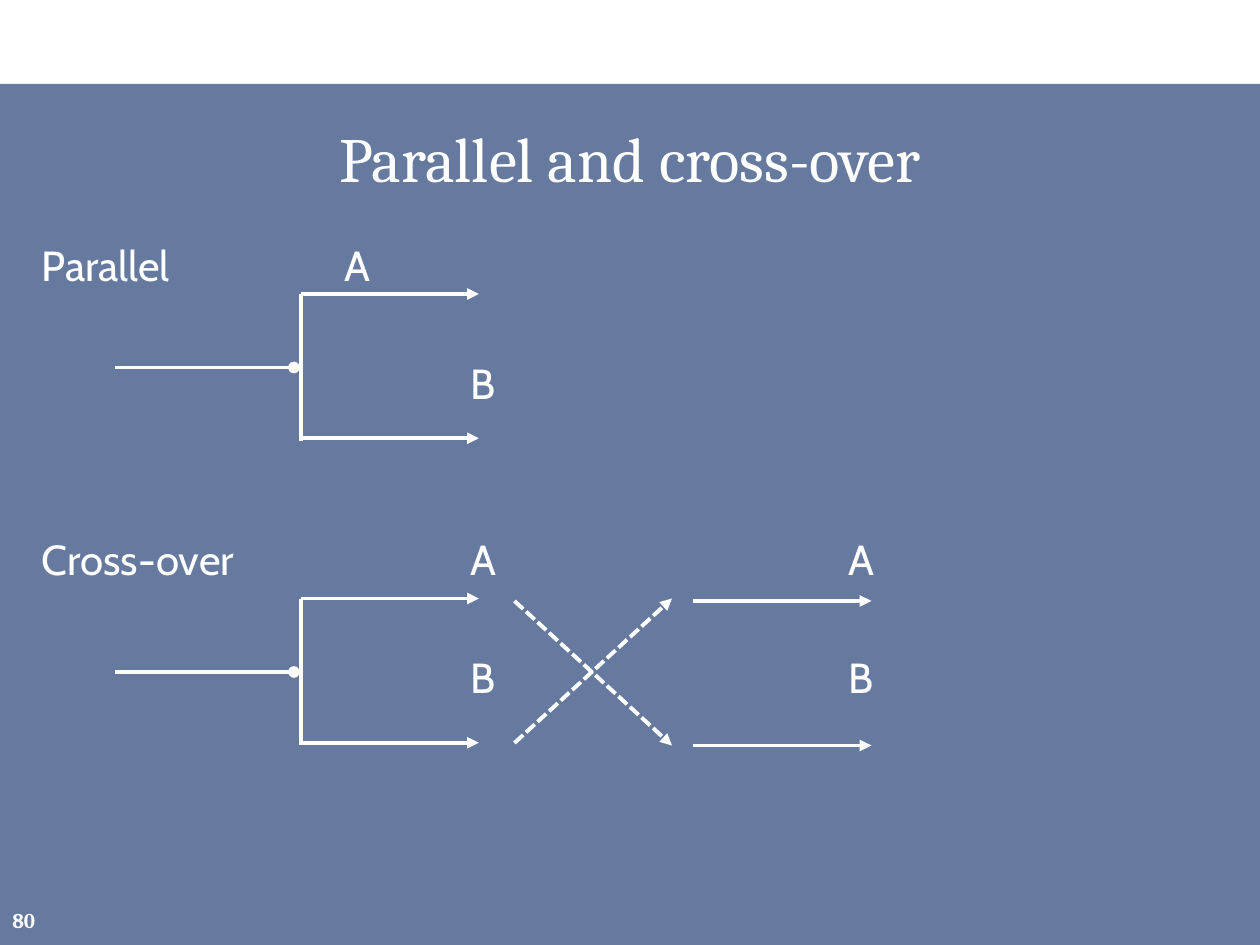
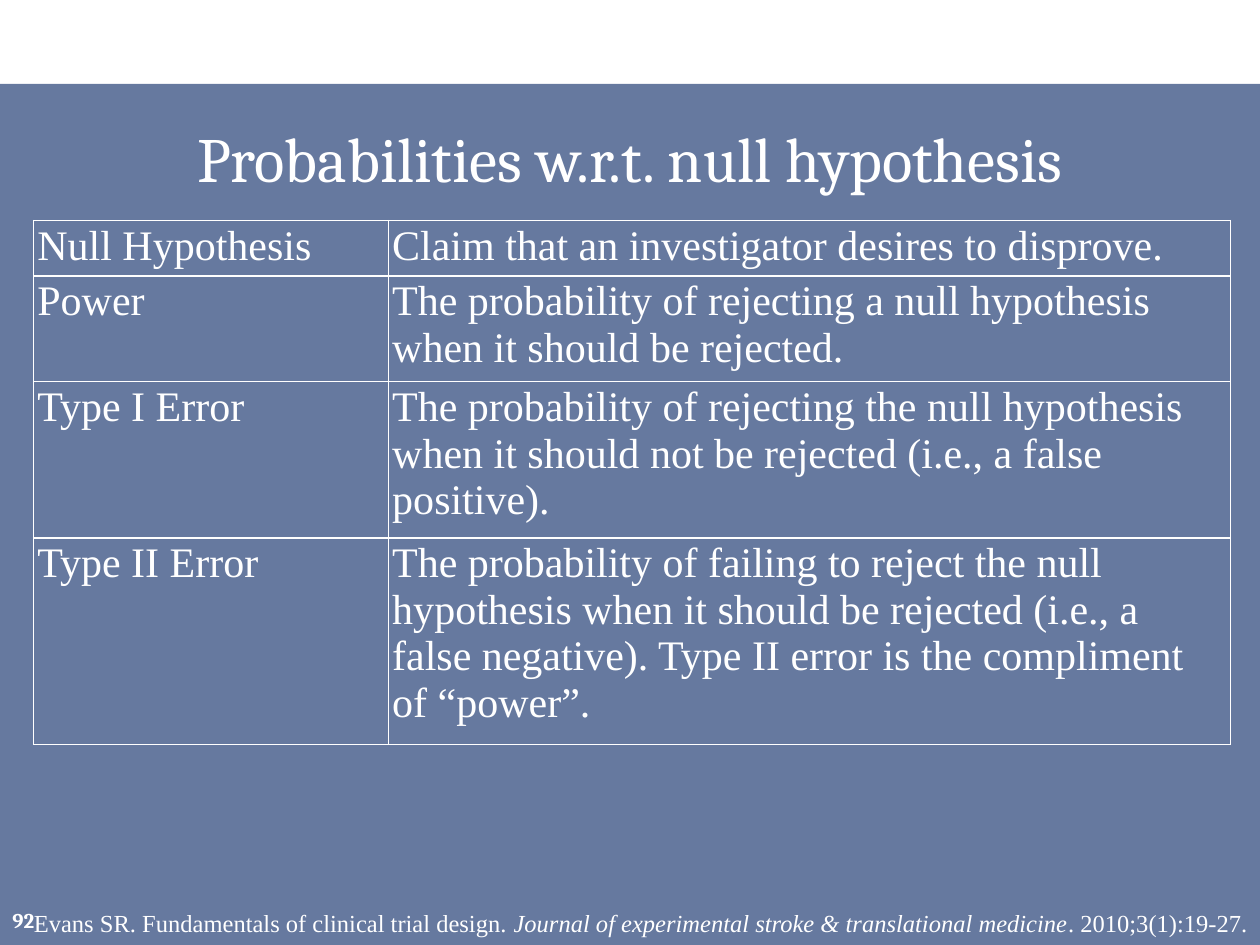
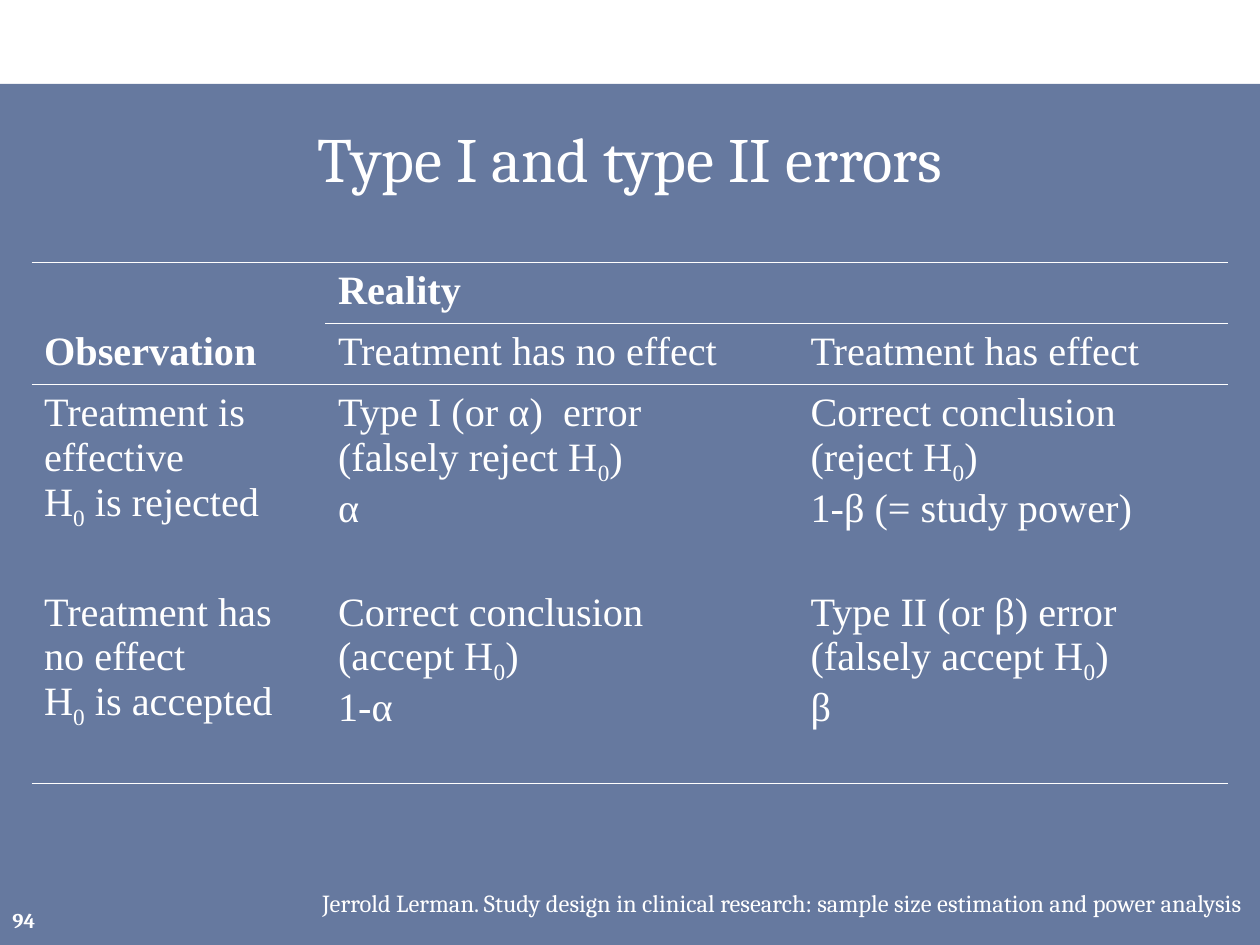
from lxml import etree
from pptx import Presentation
from pptx.dml.color import RGBColor
from pptx.enum.dml import MSO_LINE
from pptx.enum.shapes import MSO_CONNECTOR, MSO_SHAPE
from pptx.enum.text import MSO_ANCHOR, PP_ALIGN
from pptx.oxml.ns import qn
from pptx.util import Emu, Inches, Pt

WIDTH, HEIGHT = Inches(10), Inches(7.5)
COLUMNS = 120  # the slide is a grid of 120 by 90 square units
UNIT = WIDTH / COLUMNS
WHITE, NAVY = "FFFFFF", "002060"
SERIF, SANS, TABLE_FONT = "Cambria", "Cabin", "Times New Roman"
LEFT, CENTER, RIGHT = PP_ALIGN.LEFT, PP_ALIGN.CENTER, PP_ALIGN.RIGHT
TOP, MIDDLE = MSO_ANCHOR.TOP, MSO_ANCHOR.MIDDLE
STRAIGHT, RECTANGLE = MSO_CONNECTOR.STRAIGHT, MSO_SHAPE.RECTANGLE
DASHED = MSO_LINE.SQUARE_DOT
BORDER_TAGS = {"l": "a:lnL", "r": "a:lnR", "t": "a:lnT", "b": "a:lnB"}

DEFINITIONS = [
    ("Null Hypothesis", "Claim that an investigator desires to disprove."),
    ("Power", "The probability of rejecting a null hypothesis when it should "
              "be rejected."),
    ("Type I Error", "The probability of rejecting the null hypothesis when it "
                     "should not be rejected (i.e., a false positive)."),
    ("Type II Error", "The probability of failing to reject the null hypothesis "
                      "when it should be rejected (i.e., a false negative). "
                      "Type II error is the compliment of “power”."),
]
ERRORS = [
    ("", "Reality", ""),
    ("Observation", "Treatment has no effect", "Treatment has effect"),
    ("Treatment is effective\nH0 is rejected",
     "Type I (or α)  error\n(falsely reject H0)\nα",
     "Correct conclusion\n(reject H0)\n1-β (= study power)"),
    ("Treatment has no effect\nH0 is accepted",
     "Correct conclusion\n(accept H0)\n1-α",
     "Type II (or β) error\n(falsely accept H0)\nβ"),
]


def grid(units):
    return Emu(round(units * UNIT))


def rgb(color):
    return RGBColor.from_string(color)


def style_run(run, size, font, bold=False, italic=False):
    run.font.size, run.font.name = Pt(size), font
    run.font.bold, run.font.italic = bold, italic
    run.font.color.rgb = rgb(WHITE)


def add_text(slide, box, text, size, font, align=LEFT, anchor=TOP,
             bold=False, margin=0.1):
    frame = slide.shapes.add_textbox(*map(grid, box)).text_frame
    frame.word_wrap, frame.vertical_anchor = True, anchor
    frame.margin_left = frame.margin_right = Inches(margin)
    frame.text = text
    paragraph = frame.paragraphs[0]
    paragraph.alignment = align
    for run in paragraph.runs:
        style_run(run, size, font, bold)
    return paragraph


def add_line(slide, start, end, tail=None, dash=None):
    """Draw a white line between two grid points, with an optional end mark."""
    line = slide.shapes.add_connector(STRAIGHT, *map(grid, (*start, *end)))
    line.line.color.rgb, line.line.width = rgb(WHITE), Pt(2.25)
    if dash:
        line.line.dash_style = dash
    if tail:
        etree.SubElement(line.line._get_or_add_ln(), qn("a:tailEnd"), type=tail)
    etree.SubElement(line._element.spPr, qn("a:effectLst"))


def add_base(deck, title, number):
    """Add a slide with the tinted panel, its title and the page number."""
    slide = deck.slides.add_slide(deck.slide_layouts[6])
    panel = slide.shapes.add_shape(RECTANGLE, *map(grid, (0, 8, COLUMNS, 82)))
    panel.shadow.inherit = False
    panel.fill.solid()
    panel.fill.fore_color.rgb = rgb(NAVY)
    tint = panel._element.spPr.find(".//" + qn("a:srgbClr"))
    etree.SubElement(tint, qn("a:alpha"), val="60000")
    panel.line.fill.background()
    add_text(slide, (3, 10, 114, 10), title, 36, SERIF, CENTER, MIDDLE)
    add_text(slide, (0, 85.2, 6, 4.8), number, 12, SERIF, anchor=MIDDLE, bold=True)
    return slide


def add_labels(slide, left, top):
    """Set the group labels on text rows and the arm letters on tab columns."""
    row_height, tab = 5.6, 12
    first_arm = left + 2.4 * tab
    labels = [("Parallel", left, 0), ("A", first_arm, 0),
              ("B", first_arm + tab, 2), ("Cross-over", left, 5)]
    for column in (first_arm + tab, first_arm + 4 * tab):
        labels += [("A", column, 5), ("B", column, 7)]
    for text, column, row in labels:
        add_text(slide, (column, top + row * row_height, 24, row_height),
                 text, 24, SANS, anchor=MIDDLE, margin=0)


def add_fork(slide, left, top):
    """Draw a stem that splits into two arrows."""
    split, tip, lower = left + 17.7, left + 34.6, top + 13.74
    add_line(slide, (left, top + 7), (left + 17, top + 7), "oval")
    add_line(slide, (split, top), (split, top + 14))
    for arm in (top, lower):
        add_line(slide, (split, arm), (tip, arm), "triangle")


def add_crossing(slide, left, top):
    """Draw two crossing dashed arrows that lead to two straight arrows."""
    upper, lower = top + 0.24, top + 14
    for arm in (upper, lower):
        add_line(slide, (left + 17, arm), (left + 34, arm), "triangle")
    add_line(slide, (left, upper), (left + 15, lower), "triangle", DASHED)
    add_line(slide, (left, lower - 0.24), (left + 15, top), "triangle", DASHED)


def set_borders(cell, sides):
    properties = cell._tc.get_or_add_tcPr()
    for side, tag in BORDER_TAGS.items():
        border = etree.SubElement(properties, qn(tag), w="12700")
        if side in sides:
            fill = etree.SubElement(border, qn("a:solidFill"))
            etree.SubElement(fill, qn("a:srgbClr"), val=WHITE)
        else:
            etree.SubElement(border, qn("a:noFill"))


def fill_cell(cell, text, size, bold):
    """Write the cell's lines, lowering the zero of each H0."""
    cell.text = text
    for paragraph in cell.text_frame.paragraphs:
        before, hypothesis, after = paragraph.text.partition("H0")
        if hypothesis:
            paragraph.text = before + "H"
            zero = paragraph.add_run()
            zero.text = "0"
            zero.font._element.set("baseline", "-25000")
            if after:
                paragraph.add_run().text = after
        for run in paragraph.runs:
            style_run(run, size, TABLE_FONT, bold)


def add_grid_table(slide, corner, widths, heights, rows, size, sides_at,
                   bold_words=(), margins=None):
    """Add an unfilled table; sides_at(row, column) names the ruled sides."""
    table = slide.shapes.add_table(
        len(rows), len(widths),
        *map(grid, (*corner, sum(widths), sum(heights)))).table
    table.first_row = table.horz_banding = False
    for column, width in zip(table.columns, widths):
        column.width = grid(width)
    for r, (height, texts) in enumerate(zip(heights, rows)):
        table.rows[r].height = grid(height)
        for c, text in enumerate(texts):
            cell = table.cell(r, c)
            set_borders(cell, sides_at(r, c))
            cell.fill.background()
            if margins:
                cell.margin_left = cell.margin_right = Inches(margins[0])
                cell.margin_top = cell.margin_bottom = Inches(margins[1])
            fill_cell(cell, text, size, text in bold_words)


def error_table_sides(row, column):
    """Rule the outer edges, the line under Reality and the header's foot."""
    top = "t" if row == 0 or (row == 1 and column) else ""
    if row == 2:
        top = "t"
    bottom = "b" if row in (1, 3) or (row == 0 and column) else ""
    return top + bottom


def build_designs(deck):
    slide = add_base(deck, "Parallel and cross-over", "80")
    add_labels(slide, 4, 22.4)
    for top in (28, 57):
        add_fork(slide, 11, top)
    add_crossing(slide, 49, 57)


def build_probabilities(deck):
    slide = add_base(deck, "Probabilities w.r.t. null hypothesis", "92")
    add_grid_table(slide, (3.2, 21), (33.8, 80.2), (4.8, 9.75, 13.6, 18.2),
                   DEFINITIONS, 24, lambda row, column: "lrtb",
                   margins=(0.03, 0.02))
    source = add_text(slide, (0, 85.9, COLUMNS, 4.1),
                      "Evans SR. Fundamentals of clinical trial design. ",
                      14, TABLE_FONT, RIGHT)
    journal = "Journal of experimental stroke & translational medicine"
    for text, italic in ((journal, True), (". 2010;3(1):19-27.", False)):
        run = source.add_run()
        run.text = text
        style_run(run, 14, TABLE_FONT, italic=italic)


def build_errors(deck):
    slide = add_base(deck, "Type I and type II errors", "94")
    add_grid_table(slide, (3, 25), (28, 45, 41), (5.6, 5.5, 19, 19), ERRORS, 23,
                   error_table_sides, ("Reality", "Observation"))
    add_text(slide, (5.2, 84, 114.3, 4.1),
             "Jerrold Lerman. Study design in clinical research: "
             "sample size estimation and power analysis", 14, SERIF, RIGHT)


def main():
    deck = Presentation()
    deck.slide_width, deck.slide_height = WIDTH, HEIGHT
    for build in (build_designs, build_probabilities, build_errors):
        build(deck)
    deck.save("out.pptx")


if __name__ == "__main__":
    main()
